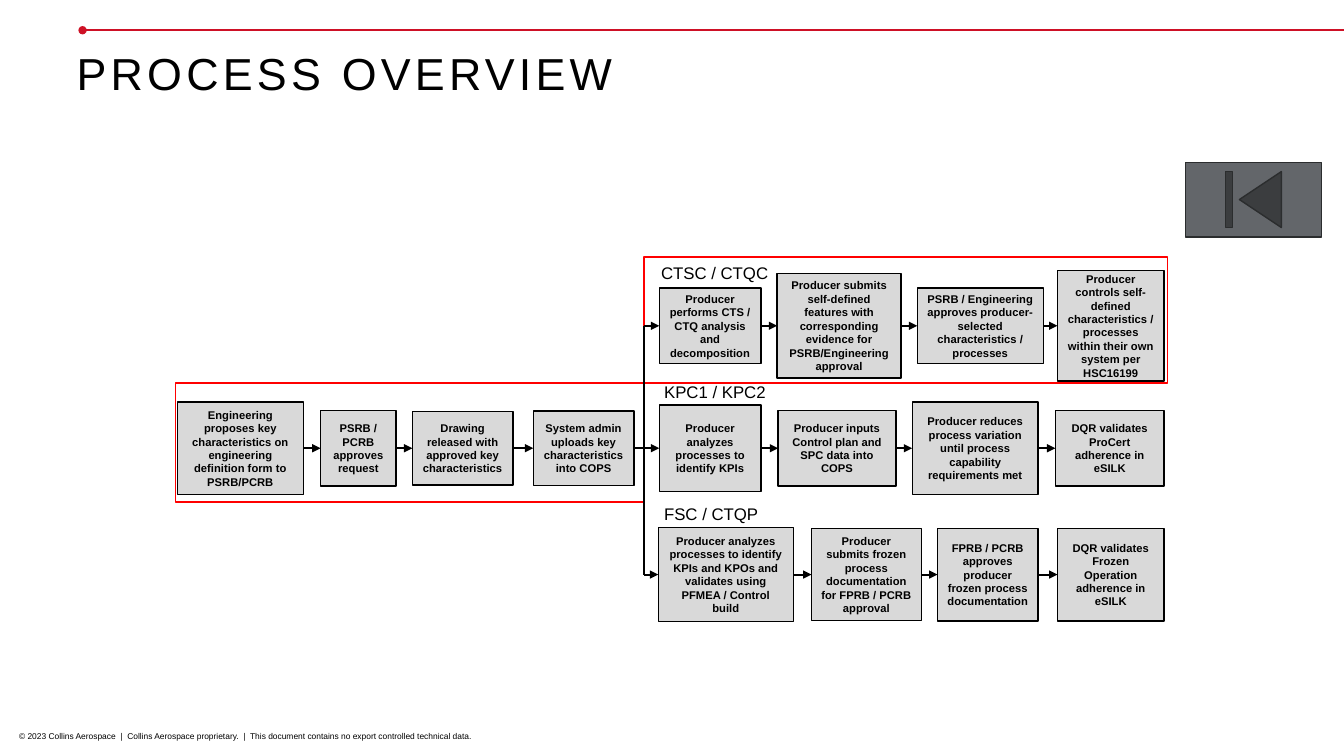
from lxml import etree
from pptx import Presentation
from pptx.dml.color import RGBColor
from pptx.enum.shapes import MSO_CONNECTOR, MSO_SHAPE
from pptx.enum.text import MSO_ANCHOR, PP_ALIGN
from pptx.oxml.ns import qn
from pptx.util import Pt

RECT = MSO_SHAPE.RECTANGLE
BACK_BUTTON = MSO_SHAPE.ACTION_BUTTON_BEGINNING
STRAIGHT = MSO_CONNECTOR.STRAIGHT
LEFT, CENTER = PP_ALIGN.LEFT, PP_ALIGN.CENTER
TOP, MIDDLE = MSO_ANCHOR.TOP, MSO_ANCHOR.MIDDLE

COLORS = {
    "black": "000000",
    "crimson": "CE1126",
    "red": "FF0000",
    "box": "D9D9D9",
    "button": "63666A",
    "button_edge": "2B2D2E",
}
FONT = "Arial"
TRUNK_X = 460.1

LEAD = (320.2, [
    (126.7, 90, 66.2, "Engineering proposes key characteristics on engineering definition form to PSRB/PCRB"),
    (229, 54, 54, "PSRB / PCRB approves request"),
    (294.5, 72, 52.6, "Drawing released with approved key characteristics"),
    (380.9, 72, 53.3, "System admin uploads key characteristics into COPS"),
])
CTSC = (232.7, [
    (470.9, 72.7, 54, "Producer performs CTS / CTQ analysis and decomposition"),
    (555.1, 88.6, 74.9, "Producer submits self-defined features with corresponding evidence for "
                        "PSRB/Engineering approval"),
    (655.2, 90, 54, "PSRB / Engineering approves producer-selected characteristics / processes"),
    (755.3, 76.3, 79.2, "Producer controls self-defined characteristics / processes within their own "
                        "system per HSC16199"),
])
KPC = (320.2, [
    (470.9, 72.7, 61.9, "Producer analyzes processes to identify KPIs"),
    (555.8, 84.2, 54, "Producer inputs Control plan and SPC data into COPS"),
    (651.6, 90, 66.2, "Producer reduces process variation until process capability requirements met"),
    (753.8, 77.8, 54, "DQR validates ProCert adherence in eSILK"),
])
FSC = (410.4, [
    (470.2, 96.5, 67, "Producer analyzes processes to identify KPIs and KPOs and validates using "
                      "PFMEA / Control build"),
    (579.6, 78.5, 65.5, "Producer submits frozen process documentation for FPRB / PCRB approval"),
    (669.6, 72, 66.2, "FPRB / PCRB approves producer frozen process documentation"),
    (755.3, 76.3, 66.2, "DQR validates Frozen Operation adherence in eSILK"),
])
LABELS = [
    (465.1, 184.3, "CTSC / CTQC"),
    (467.3, 269.3, "KPC1 / KPC2"),
    (467.3, 356.4, "FSC / CTQP"),
]


def write(sp, text, size, bold=False, align=LEFT, anchor=TOP, inset=None, spacing=None, tracking=None):
    tf = sp.text_frame
    tf.word_wrap = True
    tf.vertical_anchor = anchor
    if inset is not None:
        tf.margin_left = tf.margin_right = tf.margin_top = tf.margin_bottom = Pt(inset)
    p = tf.paragraphs[0]
    p.alignment = align
    if spacing:
        p.line_spacing = spacing
    r = p.add_run()
    r.text = text
    r.font.name = FONT
    r.font.size = Pt(size)
    r.font.bold = bold
    r.font.color.rgb = RGBColor.from_string(COLORS["black"])
    if tracking:
        r.font._element.set("spc", str(tracking * 100))


class Deck:
    def __init__(self):
        self.prs = Presentation()
        self.prs.slide_width, self.prs.slide_height = Pt(960), Pt(540)
        self.s = self.prs.slides.add_slide(self.prs.slide_layouts[6])

    def text(self, x, y, w, h, text, size, **style):
        write(self.s.shapes.add_textbox(Pt(x), Pt(y), Pt(w), Pt(h)), text, size, **style)

    def shape(self, kind, x, y, w, h, line, fill=None):
        sp = self.s.shapes.add_shape(kind, Pt(x), Pt(y), Pt(w), Pt(h))
        sp.shadow.inherit = False
        if fill:
            sp.fill.solid()
            sp.fill.fore_color.rgb = RGBColor.from_string(COLORS[fill])
        else:
            sp.fill.background()
        sp.line.color.rgb = RGBColor.from_string(COLORS[line])
        sp.line.width = Pt(1)
        return sp

    def line(self, x1, y1, x2, y2, color="black", head=None, tail=None):
        c = self.s.shapes.add_connector(STRAIGHT, Pt(x1), Pt(y1), Pt(x2), Pt(y2))
        c.line.color.rgb = RGBColor.from_string(COLORS[color])
        c.line.width = Pt(1.5)
        ln = c.line._get_or_add_ln()
        for tag, end in (("a:headEnd", head), ("a:tailEnd", tail)):
            if end:
                etree.SubElement(ln, qn(tag)).set("type", end)
        etree.SubElement(c._element.spPr, qn("a:effectLst"))

    def flow(self, row, start=None):
        y, steps = row
        for x, w, h, text in steps:
            sp = self.shape(RECT, x, y - h / 2, w, h, "black", "box")
            write(sp, text, 8, bold=True, align=CENTER, anchor=MIDDLE)
            if start is not None:
                self.line(start, y, x, y, tail="triangle")
            start = x + w
        return start


def main():
    d = Deck()
    d.line(59, 21.6, 960, 21.6, color="crimson", head="oval")
    d.text(6.5, 518.4, 793.4, 21.6,
           "© 2023 Collins Aerospace  |  Collins Aerospace proprietary.  |  "
           "This document contains no export controlled technical data.", 6)
    d.text(54.7, 40.3, 851, 53.3, "PROCESS OVERVIEW", 32, inset=0, spacing=0.8, tracking=3)
    d.shape(RECT, 125.3, 273.6, 334.8, 85, "red")
    d.shape(RECT, TRUNK_X, 183.6, 373.7, 90, "red")
    lead_end = d.flow(LEAD)
    d.line(TRUNK_X, CTSC[0], TRUNK_X, FSC[0])
    for row, start in ((CTSC, TRUNK_X), (KPC, lead_end), (FSC, TRUNK_X)):
        d.flow(row, start)
    for x, y, text in LABELS:
        d.text(x, y, 96.5, 21.6, text, 12)
    d.shape(BACK_BUTTON, 846.7, 115.9, 97.2, 53.3, "button_edge", "button")
    d.prs.save("out.pptx")


if __name__ == "__main__":
    main()
